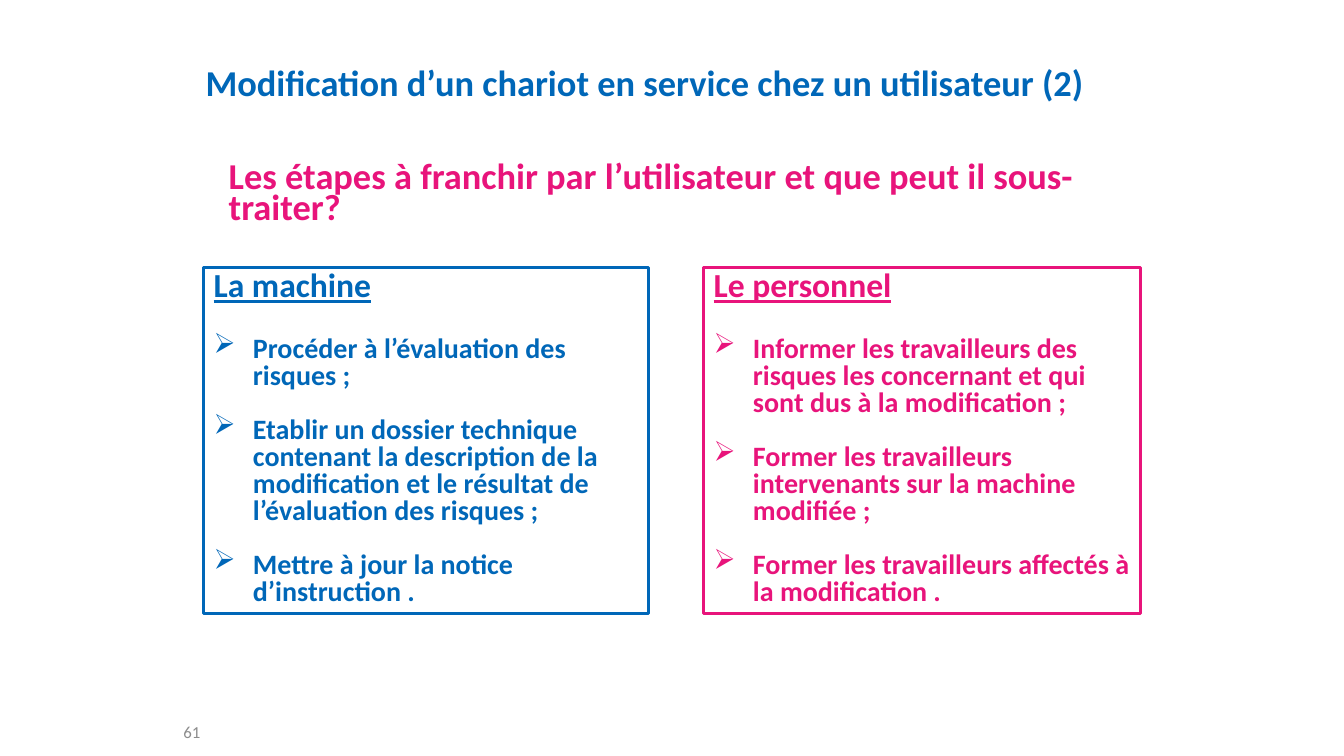
from lxml import etree
from pptx import Presentation
from pptx.dml.color import RGBColor
from pptx.enum.shapes import MSO_SHAPE
from pptx.enum.text import MSO_ANCHOR, PP_ALIGN
from pptx.oxml.ns import qn
from pptx.util import Inches, Pt

RECTANGLE = MSO_SHAPE.RECTANGLE
TOP, MIDDLE = MSO_ANCHOR.TOP, MSO_ANCHOR.MIDDLE
LEFT = PP_ALIGN.LEFT

COLORS = {"blue": "0067B8", "pink": "E8147B", "gray": "8C8C8C"}
FONT = "Calibri"
BULLET, INDENT = "➢", 0.39
PANEL_TOP, PANEL_HEIGHT = 2.65, 3.44
HEADING_GAP, ITEM_GAP = 23.4, 19.5

LABELS = [
    {"text": "Modification d’un chariot en service chez un utilisateur (2)",
     "place": (1.94, 0.52, 9, 0.58), "anchor": MIDDLE, "inset": 0.05, "spacing": 1.0,
     "style": {"size": Pt(26), "bold": True}, "color": "blue"},
    {"text": "Les étapes à franchir par l’utilisateur et que peut il sous-traiter?",
     "place": (2.17, 1.31, 8.75, 1.02), "anchor": TOP, "inset": 0.33, "spacing": 0.7,
     "style": {"size": Pt(26), "bold": True}, "color": "pink"},
    {"text": "61",
     "place": (1.72, 7.06, 0.54, 0.4), "anchor": MIDDLE, "inset": 0.05, "spacing": 1.0,
     "style": {"size": Pt(12), "bold": False}, "color": "gray"},
]

PANELS = [
    {"heading": "La machine", "color": "blue", "left": 2.02, "width": 4.41,
     "items": [
         "Procéder à l’évaluation des risques ;",
         "Etablir un dossier technique contenant la description de la modification "
         "et le résultat de l’évaluation des risques ;",
         "Mettre à jour la notice d’instruction .",
     ]},
    {"heading": "Le personnel", "color": "pink", "left": 6.98, "width": 4.33,
     "items": [
         "Informer les travailleurs des risques les concernant et qui sont dus "
         "à la modification ;",
         "Former les travailleurs intervenants sur la machine modifiée ;",
         "Former les travailleurs affectés à la modification .",
     ]},
]


def prepare(frame, anchor, inset=0.05):
    settings = {"word_wrap": True, "vertical_anchor": anchor, "margin_top": Inches(inset)}
    for name, value in settings.items():
        setattr(frame, name, value)


def write(para, text, color, style, spacing, before=0):
    layout = {"alignment": LEFT, "line_spacing": spacing, "space_before": Pt(before)}
    for name, value in layout.items():
        setattr(para, name, value)
    span = para.add_run()
    span.text = text
    for name, value in {"name": FONT, **style}.items():
        setattr(span.font, name, value)
    span.font.color.rgb = RGBColor.from_string(COLORS[color])


def add_bullet(para):
    properties = para._p.get_or_add_pPr()
    properties.set("marL", str(Inches(INDENT)))
    properties.set("indent", str(-Inches(INDENT)))
    etree.SubElement(properties, qn("a:buChar")).set("char", BULLET)


def add_label(page, label):
    box = page.shapes.add_textbox(*map(Inches, label["place"]))
    prepare(box.text_frame, label["anchor"], label["inset"])
    write(box.text_frame.paragraphs[0], label["text"], label["color"],
          label["style"], label["spacing"])


def add_panel(page, panel):
    place = (panel["left"], PANEL_TOP, panel["width"], PANEL_HEIGHT)
    box = page.shapes.add_shape(RECTANGLE, *map(Inches, place))
    box.shadow.inherit = False
    box.fill.background()
    box.line.color.rgb = RGBColor.from_string(COLORS[panel["color"]])
    box.line.width = Pt(2.25)
    frame = box.text_frame
    prepare(frame, TOP)
    write(frame.paragraphs[0], panel["heading"], panel["color"],
          {"size": Pt(24), "bold": True, "underline": True}, 0.8)
    for index, item in enumerate(panel["items"]):
        para = frame.add_paragraph()
        add_bullet(para)
        write(para, item, panel["color"], {"size": Pt(20), "bold": True}, 0.8,
              ITEM_GAP if index else HEADING_GAP)


def main():
    deck = Presentation()
    deck.slide_width, deck.slide_height = Inches(13.33), Inches(7.5)
    page = deck.slides.add_slide(deck.slide_layouts[6])
    for label in LABELS:
        add_label(page, label)
    for panel in PANELS:
        add_panel(page, panel)
    deck.save("out.pptx")


if __name__ == "__main__":
    main()
